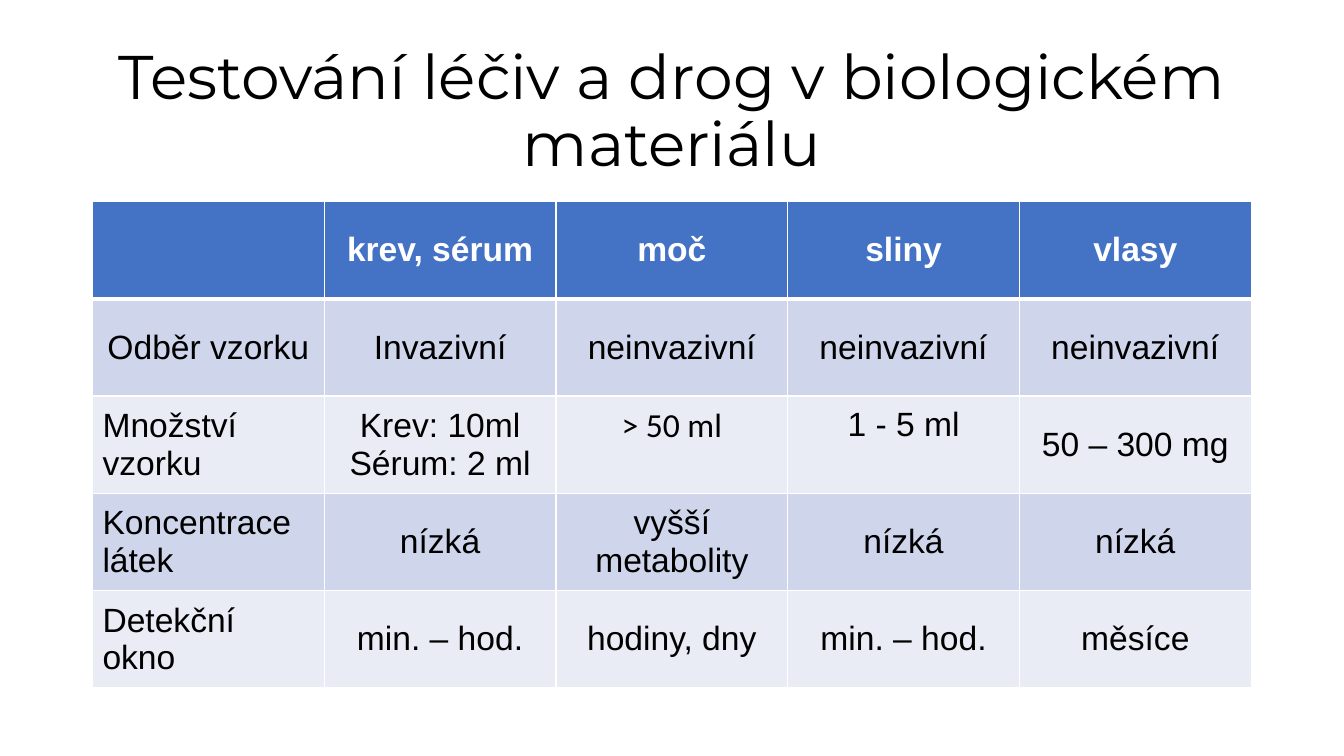
from dataclasses import dataclass

import pptx
import pptx.dml.color
import pptx.enum.text
import pptx.oxml
import pptx.oxml.ns
import pptx.util
from pptx.dml.color import RGBColor
from pptx.util import Cm, Pt

BLACK = RGBColor(0x00, 0x00, 0x00)
WHITE = RGBColor(0xFF, 0xFF, 0xFF)
BLUE = RGBColor(0x44, 0x72, 0xC4)
DARK = RGBColor(0xCF, 0xD5, 0xEA)
LIGHT = RGBColor(0xE9, 0xEB, 0xF5)

MID = pptx.enum.text.MSO_ANCHOR.MIDDLE
TOP = pptx.enum.text.MSO_ANCHOR.TOP
LEFT = pptx.enum.text.PP_ALIGN.LEFT
CENTER = pptx.enum.text.PP_ALIGN.CENTER


@dataclass(frozen=True)
class Entry:
    text: str
    align: pptx.enum.text.PP_ALIGN = CENTER
    anchor: pptx.enum.text.MSO_ANCHOR = MID
    font: str = "Arial"


GRID = [
    [Entry(""), Entry("krev, sérum"), Entry("moč"), Entry("sliny"), Entry("vlasy")],
    [Entry("Odběr vzorku"), Entry("Invazivní")] + [Entry("neinvazivní")] * 3,
    [
        Entry("Množství vzorku", LEFT),
        Entry("Krev: 10ml\nSérum: 2 ml"),
        Entry("> 50 ml", anchor=TOP, font="Calibri"),
        Entry("1 - 5 ml", anchor=TOP),
        Entry("50 – 300 mg"),
    ],
    [
        Entry("Koncentrace látek", LEFT),
        Entry("nízká"),
        Entry("vyšší\nmetabolity"),
        Entry("nízká"),
        Entry("nízká"),
    ],
    [
        Entry("Detekční okno", LEFT),
        Entry("min. – hod."),
        Entry("hodiny, dny"),
        Entry("min. – hod."),
        Entry("měsíce"),
    ],
]


def style(para: pptx.text.text._Paragraph, name: str, size: int,
          color: RGBColor, bold: bool = False) -> None:
    for run in para.runs:
        run.font.name = name
        run.font.size = Pt(size)
        run.font.color.rgb = color
        run.font.bold = bold


def edge(cell: pptx.table._Cell, side: str, width: int) -> None:
    space = pptx.oxml.ns.nsdecls("a")
    line = pptx.oxml.parse_xml(
        f'<a:ln{side} {space} w="{Pt(width)}"><a:solidFill>'
        f'<a:srgbClr val="{WHITE}"/></a:solidFill></a:ln{side}>'
    )
    cell._tc.get_or_add_tcPr().append(line)


def draw_cell(cell: pptx.table._Cell, entry: Entry, row: int) -> None:
    head = row == 0
    widths = {"L": 1, "R": 1, "T": 3 if row == 1 else 1, "B": 3 if head else 1}
    for side, width in widths.items():
        edge(cell, side, width)
    cell.fill.solid()
    cell.fill.fore_color.rgb = BLUE if head else DARK if row % 2 else LIGHT
    cell.vertical_anchor = entry.anchor
    if entry.anchor == TOP:
        cell.margin_top = Cm(0.25)
    cell.text_frame.text = entry.text
    for para in cell.text_frame.paragraphs:
        para.alignment = entry.align
        style(para, entry.font, 24, WHITE if head else BLACK, head)


def draw_title(slide: pptx.slide.Slide) -> None:
    box = slide.shapes.add_textbox(Cm(2.33), Cm(1.01), Cm(29.21), Cm(3.68))
    frame = box.text_frame
    frame.word_wrap = True
    frame.vertical_anchor = MID
    frame.text = "Testování léčiv a drog v biologickém materiálu"
    para = frame.paragraphs[0]
    para.alignment = CENTER
    para.line_spacing = 0.9
    style(para, "Montserrat", 44, BLACK)


def draw_table(slide: pptx.slide.Slide) -> None:
    rows, cols = len(GRID), len(GRID[0])
    wide, high = Cm(5.84), Cm(2.45)
    table = slide.shapes.add_table(
        rows, cols, Cm(2.33), Cm(5.08), wide * cols, high * rows
    ).table
    for col in table.columns:
        col.width = wide
    for row, line in enumerate(GRID):
        table.rows[row].height = high
        for col, entry in enumerate(line):
            draw_cell(table.cell(row, col), entry, row)


def main() -> None:
    deck = pptx.Presentation()
    deck.slide_width = Cm(33.87)
    deck.slide_height = Cm(19.05)
    slide = deck.slides.add_slide(deck.slide_layouts[6])
    draw_title(slide)
    draw_table(slide)
    deck.save("out.pptx")


if __name__ == "__main__":
    main()
